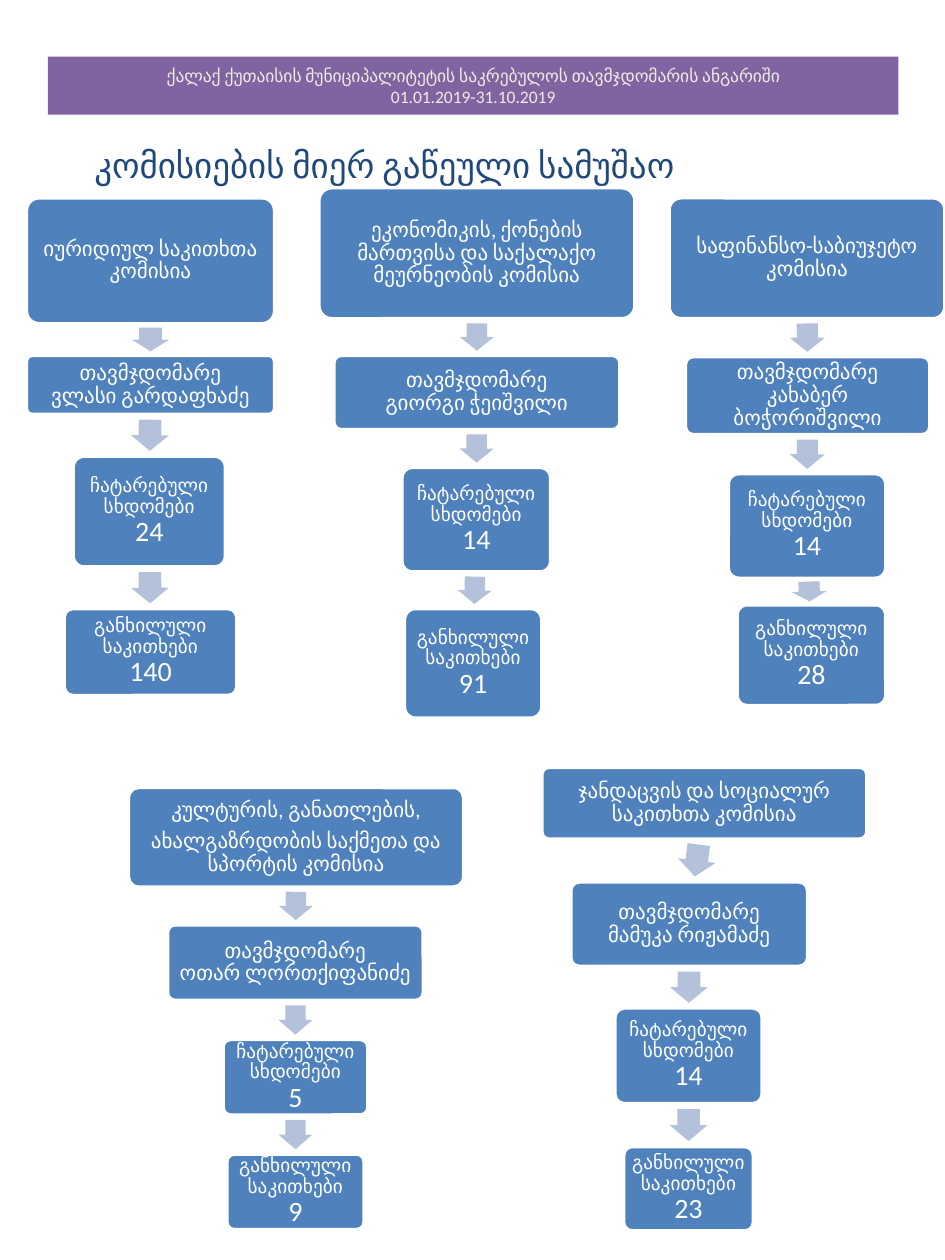
from itertools import pairwise
from math import atan2, degrees

from pptx import Presentation
from pptx.dml.color import RGBColor
from pptx.enum.shapes import MSO_SHAPE
from pptx.enum.text import MSO_ANCHOR, PP_ALIGN
from pptx.util import Inches, Pt

COLORS = {
    "banner": "8064A2",
    "banner_text": "EEECE1",
    "heading": "1F497D",
    "box": "4F81BD",
    "arrow": "B3C1DB",
    "white": "FFFFFF",
}
CHAIR = "თავმჯდომარე"
SESSIONS = "ჩატარებული სხდომები"
ISSUES = "განხილული საკითხები"

# Boxes run from the top down: (left, top, width, height) in inches.
COMMISSIONS = [
    {
        "name": ["იურიდიულ საკითხთა კომისია"],
        "chair": ["ვლასი გარდაფხაძე"],
        "sessions": "24", "issues": "140", "arrow_width": 0.3,
        "boxes": [(0.21, 1.57, 1.97, 1), (0.21, 2.82, 1.97, 0.47),
                  (0.58, 3.62, 1.21, 0.88), (0.51, 4.83, 1.37, 0.69)],
    },
    {
        "name": ["ეკონომიკის, ქონების მართვისა და საქალაქო მეურნეობის კომისია"],
        "chair": ["გიორგი ჭეიშვილი"],
        "sessions": "14", "issues": "91", "arrow_width": 0.27,
        "boxes": [(2.53, 1.49, 2.51, 1.04), (2.65, 2.82, 2.27, 0.59),
                  (3.19, 3.71, 1.18, 0.83), (3.21, 4.83, 1.09, 0.87)],
    },
    {
        "name": ["საფინანსო-საბიუჯეტო კომისია"],
        "chair": ["კახაბერ", "ბოჭორიშვილი"],
        "sessions": "14", "issues": "28", "arrow_width": 0.28,
        "boxes": [(5.31, 1.57, 2.19, 0.96), (5.44, 2.83, 1.94, 0.62),
                  (5.78, 3.76, 1.25, 0.83), (5.85, 4.8, 1.18, 0.8)],
    },
    {
        "name": ["ჯანდაცვის და სოციალურ საკითხთა კომისია"],
        "chair": ["მამუკა რიჟამაძე"],
        "sessions": "14", "issues": "23", "arrow_width": 0.3,
        "boxes": [(4.3, 6.09, 2.58, 0.57), (4.53, 7, 1.88, 0.67),
                  (4.88, 8, 1.17, 0.76), (4.95, 9.1, 1.03, 0.67)],
    },
    {
        "name": ["კულტურის, განათლების,",
                 "ახალგაზრდობის საქმეთა და სპორტის კომისია"],
        "chair": ["ოთარ ლორთქიფანიძე"],
        "sessions": "5", "issues": "9", "arrow_width": 0.27,
        "boxes": [(1.02, 6.25, 2.66, 0.79), (1.33, 7.34, 2.03, 0.6),
                  (1.77, 8.25, 1.15, 0.6), (1.8, 9.16, 1.09, 0.6)],
    },
]


def add_text(sp, lines, color="white", align=PP_ALIGN.CENTER,
             anchor=MSO_ANCHOR.MIDDLE, inset=0.03, line_spacing=0.9, gap=0):
    """Write (text, size) pairs as paragraphs, with gap points between them."""
    tf = sp.text_frame
    tf.word_wrap = True
    tf.vertical_anchor = anchor
    tf.margin_left = tf.margin_right = Inches(inset)
    tf.margin_top = tf.margin_bottom = Inches(0.05)
    for i, (text, size) in enumerate(lines):
        p = tf.add_paragraph() if i else tf.paragraphs[0]
        p.alignment = align
        p.line_spacing = line_spacing
        p.space_before = Pt(gap if i else 0)
        r = p.add_run()
        r.text = text
        r.font.name = "Calibri"
        r.font.size = Pt(size)
        r.font.color.rgb = RGBColor.from_string(COLORS[color])


def add_filled(s, kind, rect, fill, outline=None):
    sp = s.shapes.add_shape(kind, *map(Inches, rect))
    sp.shadow.inherit = False
    sp.fill.solid()
    sp.fill.fore_color.rgb = RGBColor.from_string(COLORS[fill])
    if outline:
        sp.line.color.rgb = RGBColor.from_string(COLORS[outline])
        sp.line.width = Pt(2)
    else:
        sp.line.fill.background()
    return sp


def add_box(s, rect, lines, gap=0):
    sp = add_filled(s, MSO_SHAPE.ROUNDED_RECTANGLE, rect, "box", "white")
    sp.adjustments[0] = 0.1
    add_text(sp, lines, gap=gap)


def add_arrow(s, upper, lower, width):
    """Put an arrow in the gap between two boxes, aimed from centre to centre."""
    (x1, y1, w1, h1), (x2, y2, w2, h2) = upper, lower
    start_x, end_x = x1 + w1 / 2, x2 + w2 / 2
    length = 0.75 * (y2 - y1 - h1)
    x, y = (start_x + end_x) / 2, (y1 + h1 + y2) / 2
    rect = (x - length / 2, y - width / 2, length, width)
    sp = add_filled(s, MSO_SHAPE.RIGHT_ARROW, rect, "arrow")
    sp.adjustments[0] = 0.6
    sp.adjustments[1] = 0.5
    sp.rotation = degrees(atan2(y2 + h2 / 2 - y1 - h1 / 2, end_x - start_x))


def add_commission(s, item):
    name, chair, sessions, issues = item["boxes"]
    add_box(s, name, [(text, 12) for text in item["name"]], gap=5)
    add_box(s, chair, [(text, 12) for text in [CHAIR, *item["chair"]]])
    add_box(s, sessions, [(SESSIONS, 11), (item["sessions"], 16)])
    add_box(s, issues, [(ISSUES, 11), (item["issues"], 16)])
    for upper, lower in pairwise(item["boxes"]):
        add_arrow(s, upper, lower, item["arrow_width"])


def main():
    prs = Presentation()
    prs.slide_width, prs.slide_height = Inches(7.5), Inches(10)
    s = prs.slides.add_slide(prs.slide_layouts[6])

    banner = add_filled(s, MSO_SHAPE.RECTANGLE, (0.38, 0.45, 6.75, 0.46), "banner")
    add_text(banner, [
        ("ქალაქ ქუთაისის მუნიციპალიტეტის საკრებულოს თავმჯდომარის ანგარიში", 10),
        ("01.01.2019-31.10.2019", 10),
    ], color="banner_text", inset=0.1, line_spacing=1)

    heading = s.shapes.add_textbox(Inches(0.65), Inches(1.09), Inches(6), Inches(0.45))
    add_text(heading, [("კომისიების მიერ გაწეული სამუშაო", 20)], color="heading",
             align=PP_ALIGN.LEFT, anchor=MSO_ANCHOR.TOP, inset=0.1, line_spacing=1)

    for item in COMMISSIONS:
        add_commission(s, item)
    prs.save("out.pptx")


if __name__ == "__main__":
    main()
